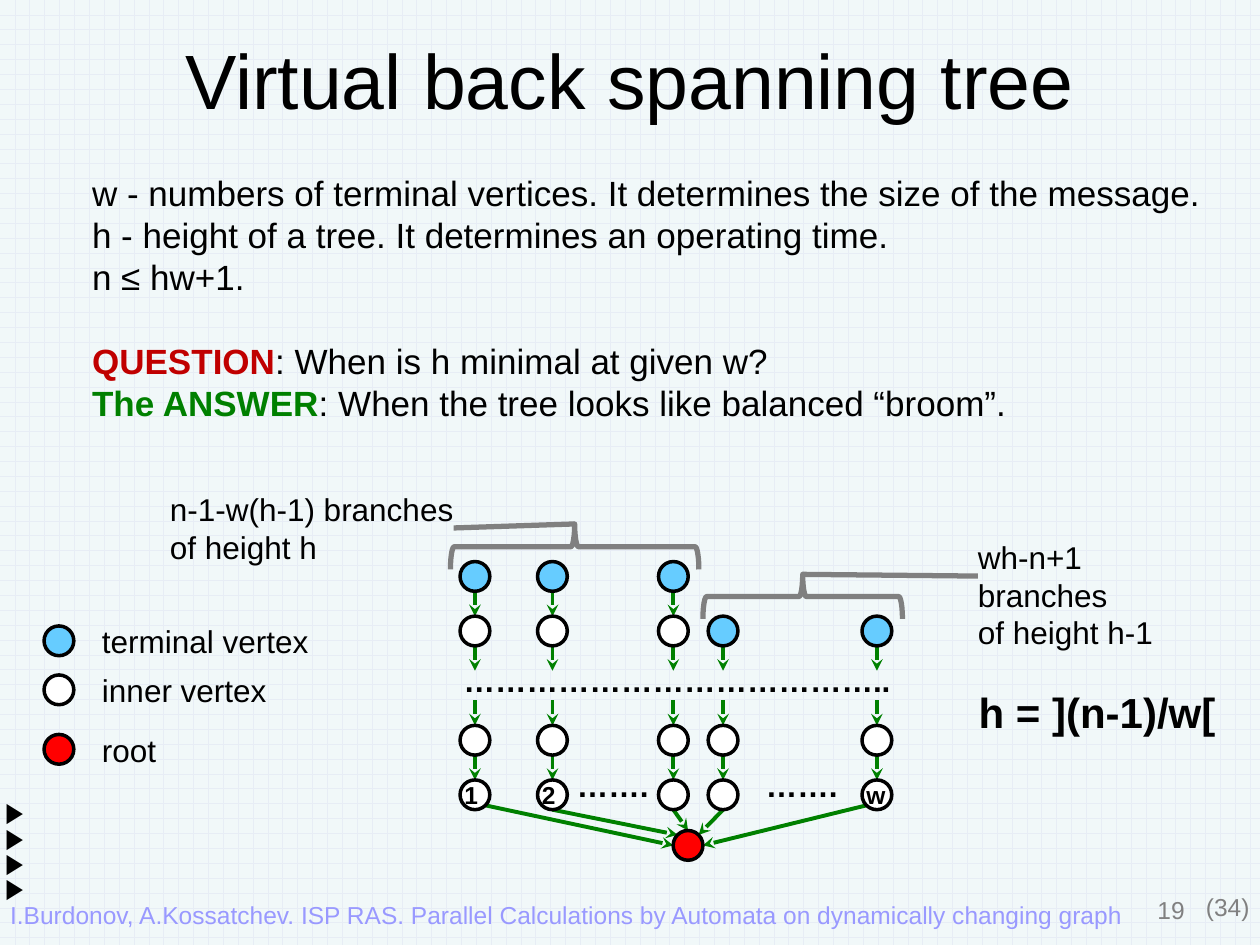
from math import cos, radians, sin

from lxml import etree
from pptx import Presentation
from pptx.dml.color import RGBColor
from pptx.enum import dml, shapes, text
from pptx.oxml import ns
from pptx.util import Pt

HUES = {
    "ink": "000000", "gray": "808080", "paper": "F1F8F9", "grid": "E7EDF5",
    "lilac": "9999FF", "red": "C00000", "green": "008000",
    "leaf": "66CCFF", "inner": "FFFFFF", "root": "FF0000",
}
SIZE = 17  # diameter of a vertex


def hue(name):
    return RGBColor.from_string(HUES[name])


def sub(parent, tag, **attrs):
    return etree.SubElement(parent, ns.qn(tag), **attrs)


def style(font, size, color="ink", bold=False, name="Arial"):
    font.size, font.bold, font.name = Pt(size), bold, name
    font.color.rgb = hue(color)


def inset(frame, left, top, right, bottom):
    frame.margin_left, frame.margin_top = Pt(left), Pt(top)
    frame.margin_right, frame.margin_bottom = Pt(right), Pt(bottom)


def put(shape, box):
    shape.left, shape.top, shape.width, shape.height = map(Pt, box)


def label(slide, box, lines, size, color="ink", bold=False, name="Arial",
          pad=(7.2, 3.6, 7.2, 3.6), align=text.PP_ALIGN.LEFT):
    frame = slide.shapes.add_textbox(*map(Pt, box)).text_frame
    frame.word_wrap = False
    inset(frame, *pad)
    frame.text = lines
    for para in frame.paragraphs:
        para.alignment = align
        style(para.font, size, color, bold, name)


def line(slide, start, end, color, width, arrow=False):
    link = slide.shapes.add_connector(
        shapes.MSO_CONNECTOR.STRAIGHT, *map(Pt, (*start, *end)))
    link.line.color.rgb, link.line.width = hue(color), Pt(width)
    if arrow:
        sub(link.line._get_or_add_ln(), "a:tailEnd", type="stealth")
    sub(link._element.spPr, "a:effectLst")


def edge(slide, start, end):
    line(slide, start, end, "green", 2.25, arrow=True)


def rim(x, y, angle):
    """Point on a vertex's outline, clockwise in degrees from the right."""
    turn = radians(angle)
    return x + SIZE / 2 * cos(turn), y + SIZE / 2 * sin(turn)


def vertex(slide, x, y, kind, mark=""):
    """Draw a vertex centred on x, y."""
    box = (x - SIZE / 2, y - SIZE / 2, SIZE, SIZE)
    dot = slide.shapes.add_shape(shapes.MSO_SHAPE.OVAL, *map(Pt, box))
    dot.shadow.inherit = False
    dot.fill.solid()
    dot.fill.fore_color.rgb = hue(kind)
    dot.line.color.rgb, dot.line.width = hue("ink"), Pt(2)
    if mark:
        frame = dot.text_frame
        frame.word_wrap = False
        inset(frame, 0, 3.6, 0, 3.6)
        frame.text = mark
        style(frame.paragraphs[0].font, 14, bold=True)


def brace(slide, box, end):
    """Draw a brace pointing up, with a line from its tip to end."""
    x, y, wide, high = box
    mid, drop = x + wide / 2, y + high / 2
    mark = slide.shapes.add_shape(
        shapes.MSO_SHAPE.RIGHT_BRACE,
        *map(Pt, (mid - high / 2, drop - wide / 2, high, wide)))
    mark.rotation = 270
    mark.shadow.inherit = False
    mark.fill.background()
    mark.line.color.rgb, mark.line.width = hue("gray"), Pt(3)
    line(slide, (mid, y), end, "gray", 3)


def intro(slide, box):
    body = slide.placeholders[1]
    put(body, box)
    frame = body.text_frame
    frame.word_wrap = False
    frame.auto_size = text.MSO_AUTO_SIZE.NONE
    rows = [
        ("", "w - numbers of terminal vertices. It determines the size of the message.", "ink"),
        ("", "h - height of a tree. It determines an operating time.", "ink"),
        ("", "n ≤ hw+1.", "ink"),
        ("QUESTION", ": When is h minimal at given w?", "red"),
        ("The ANSWER", ": When the tree looks like balanced “broom”.", "green"),
    ]
    for i, (lead, rest, color) in enumerate(rows):
        para = frame.add_paragraph() if i else frame.paragraphs[0]
        para.space_before = Pt(24 if lead == "QUESTION" else 0)
        props = para._p.get_or_add_pPr()
        props.set("marL", "0")
        props.set("indent", "0")
        sub(props, "a:buNone")
        style(para.font, 20)
        if lead:
            run = para.add_run()
            run.text = lead
            run.font.bold, run.font.color.rgb = True, hue(color)
        para.add_run().text = rest


def legend(slide, x, y):
    rows = [("leaf", "terminal vertex", 0, 134), ("inner", "inner vertex", 28, 109),
            ("root", "root", 62, 46)]
    for kind, name, drop, wide in rows:
        vertex(slide, x + 8.5, y + drop + 14.2, kind)
        label(slide, (x + 26, y + drop, wide, 29), name, 18)


def broom(slide, x, y):
    """Draw the tree; x, y is the centre of its first terminal vertex."""
    step = 31.2
    root = (x + 121.8, y + 153.7)
    # offset, first level, mark, angle of leaving, angle of reaching the root
    stems = [(0, 0, "1", 45, 180), (44.3, 0, "2", 90, 225), (113.4, 0, "", 90, 270),
             (141.8, 1, "", 90, 315), (229.7, 1, "w", 135, 0)]
    for shift, first, mark, leave, reach in stems:
        mid = x + shift
        for level in range(first, 4):
            top = y + level * step + SIZE / 2
            edge(slide, (mid, top), (mid, top + step - SIZE))
        edge(slide, rim(mid, y + 4 * step, leave), rim(*root, reach))
        for level in (0, 1, 3, 4):
            if level >= first:
                vertex(slide, mid, y + level * step, "leaf" if level == first else "inner",
                       mark if level == 4 else "")
    vertex(slide, *root, "root")

    label(slide, (x - 13.6, y + 45, 261, 29), "…………………………………..", 18, bold=True)
    for shift in (51.2, 159.2):
        label(slide, (x + shift, y + 104.8, 56, 29), "…….", 18, bold=True)

    brace(slide, (x - 14, y - 30, 142, 26), (x - 12.2, y - 27.7))
    brace(slide, (x + 130.3, y - 1.2, 114, 25.4), (x + 287.4, y - 0.2))
    label(slide, (x - 181.4, y - 53, 169.2, 50.4),
          "n-1-w(h-1) branches\nof height h", 18, pad=(7.2, 3.6, 0, 3.6))
    label(slide, (x + 287.4, y - 25.6, 145.4, 50.4),
          "wh-n+1 branches\nof height h-1", 18, pad=(0, 3.6, 7.2, 3.6))


def footer(slide, x, y):
    flat = (0, 0, 0, 0)
    for i in range(4):
        label(slide, (x, y + i * 14.4, 8.6, 19.4), "▶", 16, bold=True,
              name="Times New Roman", pad=flat)
    label(slide, (x + 2.9, y + 59.8, 664, 17), "I.Burdonov, A.Kossatchev. ISP RAS. "
          "Parallel Calculations by Automata on dynamically changing graph",
          14, "lilac", pad=flat)
    label(slide, (x + 513.4, y + 53.3, 167.8, 37.4), "19", 14, "gray",
          align=text.PP_ALIGN.RIGHT)
    label(slide, (x + 686.2, y + 55.5, 25.2, 16.6), "(34)", 14, "gray", pad=flat)


def main():
    deck = Presentation()
    deck.slide_width, deck.slide_height = Pt(720), Pt(540)
    slide = deck.slides.add_slide(deck.slide_layouts[1])
    fill = slide.background.fill
    fill.patterned()
    fill.pattern = dml.MSO_PATTERN.HORIZONTAL_BRICK
    fill.fore_color.rgb, fill.back_color.rgb = hue("grid"), hue("paper")

    title = slide.shapes.title
    put(title, (36, 0, 648, 90))
    title.text_frame.text = "Virtual back spanning tree"
    style(title.text_frame.paragraphs[0].font, 44)

    intro(slide, (45.4, 94.3, 652.3, 152.6))
    legend(slide, 25.2, 352)
    broom(slide, 271.4, 329.4)
    label(slide, (552.2, 388.8, 151.2, 36), "h = ](n-1)/w[", 24, bold=True)
    footer(slide, 2.9, 454.3)
    deck.save("out.pptx")


if __name__ == "__main__":
    main()
